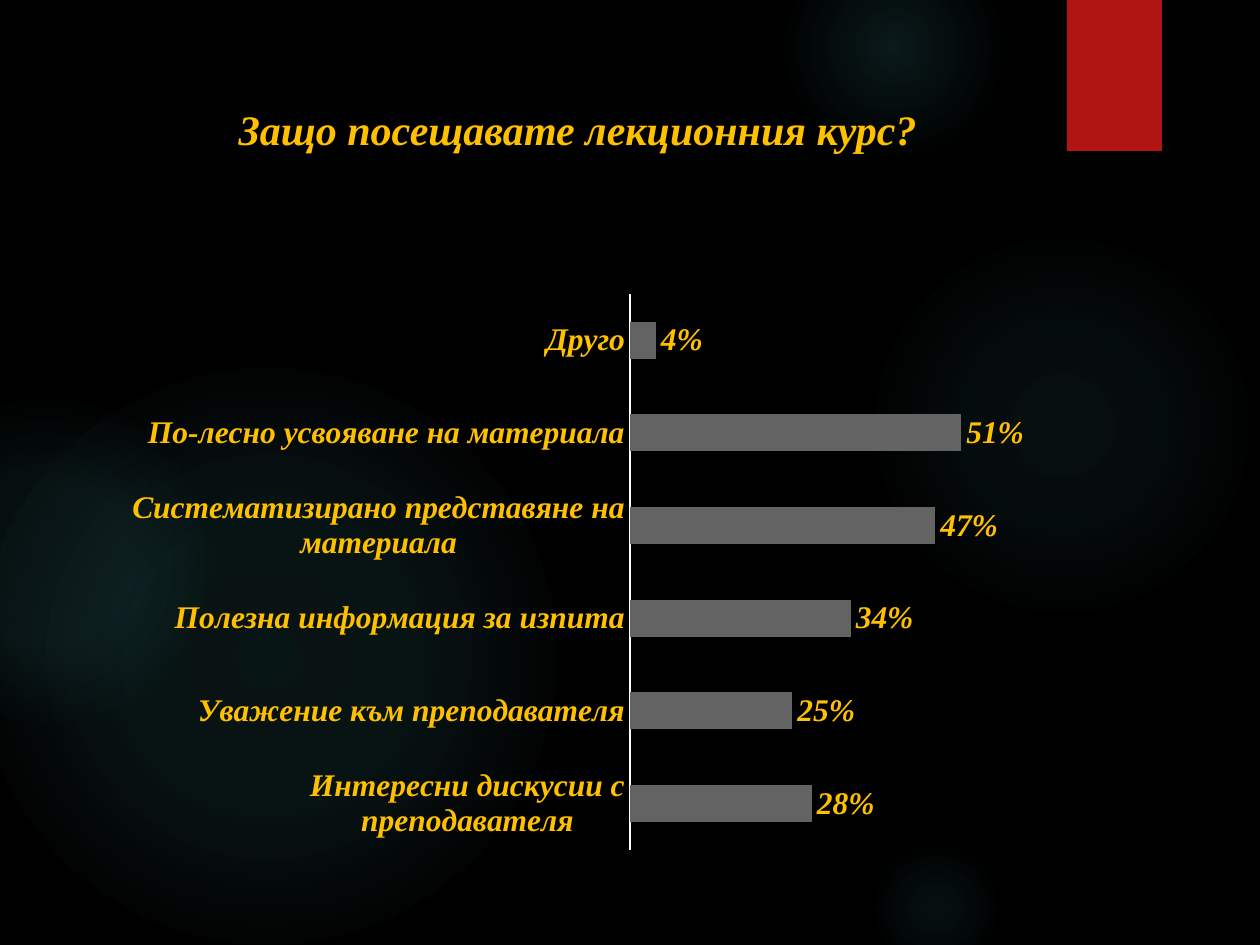
import pptx
import pptx.chart.data
import pptx.dml.color
import pptx.enum.chart
import pptx.enum.shapes
import pptx.enum.text
import pptx.oxml
import pptx.oxml.ns
import pptx.util

PX = 914400 / 126  # EMU per px
BLACK, WHITE, GOLD, RED, GREY, TEAL = "000000", "FFFFFF", "FFC000", "B01513", "636363", "50B9C1"
SERIF, SANS = "Times New Roman", "TeX Gyre Adventor"


def px(*lengths):
    return [pptx.util.Emu(round(n * PX)) for n in lengths]


def rgb(value):
    return pptx.dml.color.RGBColor.from_string(value)


def set_font(font, size=18, color=GOLD, name=SERIF, bold=True, italic=True):
    font.size, font.name, font.bold, font.italic = pptx.util.Pt(size), name, bold, italic
    font.color.rgb = rgb(color)


def write(p, text, **style):
    r = p.add_run()
    r.text = text
    set_font(r.font, **style)


class Deck:
    def __init__(self, width, height, background):
        self.prs = pptx.Presentation()
        self.prs.slide_width, self.prs.slide_height = px(width, height)
        self.s = self.prs.slides.add_slide(self.prs.slide_layouts[6])
        fill = self.s.background.fill
        fill.solid()
        fill.fore_color.rgb = rgb(background)

    def shape(self, kind, box, color):
        sp = self.s.shapes.add_shape(kind, *px(*box))
        sp.shadow.inherit = False
        sp.fill.solid()
        sp.fill.fore_color.rgb = rgb(color)
        sp.line.fill.background()
        return sp

    def glow(self, left, top, size, stops, color=TEAL):
        """Circle that fades outwards; stops are (position %, opacity %)."""
        sp = self.shape(pptx.enum.shapes.MSO_SHAPE.OVAL, (left, top, size, size), color)
        gs = "".join(
            f'<a:gs pos="{pos * 1000}"><a:srgbClr val="{color}">'
            f'<a:alpha val="{alpha * 1000}"/></a:srgbClr></a:gs>'
            for pos, alpha in stops)
        grad = pptx.oxml.parse_xml(
            f'<a:gradFill {pptx.oxml.ns.nsdecls("a")}><a:gsLst>{gs}</a:gsLst><a:path path="circle">'
            '<a:fillToRect l="50000" t="50000" r="50000" b="50000"/></a:path></a:gradFill>')
        spPr = sp._element.spPr
        spPr.replace(spPr.find(pptx.oxml.ns.qn("a:solidFill")), grad)

    def text(self, box, text, **style):
        tf = self.s.shapes.add_textbox(*px(*box)).text_frame
        tf.word_wrap = True
        tf.vertical_anchor = pptx.enum.text.MSO_ANCHOR.MIDDLE
        p = tf.paragraphs[0]
        p.alignment = pptx.enum.text.PP_ALIGN.CENTER
        write(p, text, **style)

    def bar_chart(self, box, plot, name, values, color):
        """Horizontal bars; plot is the inner plot area in slide px."""
        data = pptx.chart.data.CategoryChartData(number_format="0%")
        data.categories = list(values)
        data.add_series(name, list(values.values()))
        kind = pptx.enum.chart.XL_CHART_TYPE.BAR_CLUSTERED
        chart = self.s.shapes.add_chart(kind, *px(*box), data).chart
        chart.has_legend = chart.has_title = False
        set_font(chart.font, color=WHITE, name=SANS, bold=False, italic=False)

        # Axes
        axis = chart.category_axis
        axis.major_tick_mark = pptx.enum.chart.XL_TICK_MARK.NONE
        axis.format.line.color.rgb = rgb(WHITE)
        axis.format.line.width = pptx.util.Pt(1)
        set_font(axis.tick_labels.font)
        scale = chart.value_axis
        scale.minimum_scale, scale.maximum_scale = 0, 0.6
        scale.has_major_gridlines = False
        scale.visible = False

        # Bars and their labels
        bars = chart.plots[0]
        bars.gap_width, bars.vary_by_categories = 150, False
        series = bars.series[0]
        series.format.fill.solid()
        series.format.fill.fore_color.rgb = rgb(color)
        labels = series.data_labels
        labels.show_value = True
        labels.number_format, labels.number_format_is_linked = "0%", False
        labels.position = pptx.enum.chart.XL_LABEL_POSITION.OUTSIDE_END
        set_font(labels.font)

        # Inner plot area
        left, top, width, height = box
        parts = {"x": (plot[0] - left) / width, "y": (plot[1] - top) / height,
                 "w": plot[2] / width, "h": plot[3] / height}
        modes = '<c:xMode val="edge"/><c:yMode val="edge"/>'
        sizes = "".join(f'<c:{k} val="{v:.4f}"/>' for k, v in parts.items())
        area = chart._chartSpace.chart.plotArea
        for old in area.findall(pptx.oxml.ns.qn("c:layout")):
            area.remove(old)
        area.insert(0, pptx.oxml.parse_xml(
            f'<c:layout {pptx.oxml.ns.nsdecls("c")}><c:manualLayout>'
            f'<c:layoutTarget val="inner"/>{modes}{sizes}</c:manualLayout></c:layout>'))


def main():
    deck = Deck(1260, 945, BLACK)

    # Background glows
    deck.glow(868, 231, 388, [(0, 7), (36, 6), (69, 0)])
    deck.glow(784, -63, 220, [(0, 14), (36, 7), (73, 0)])
    deck.glow(868, 840, 136, [(0, 9), (36, 5), (66, 0)])
    deck.glow(-21, 368, 577, [(0, 11), (36, 10), (75, 0)])
    deck.glow(-116, 399, 325, [(0, 8), (36, 8), (72, 0)])

    # Ribbon and title
    deck.shape(pptx.enum.shapes.MSO_SHAPE.RECTANGLE, (1067, 0, 95, 151), RED)
    deck.text((63, 96, 1029, 66 + 34 - 34), "Защо посещавате лекционния курс?", size=24)

    # Survey answers, from the bottom bar up
    answers = {
        "Интересни дискусии с преподавателя": 0.28,
        "Уважение към преподавателя": 0.25,
        "Полезна информация за изпита": 0.34,
        "Систематизирано представяне на материала": 0.47,
        "По-лесно усвояване на материала": 0.51,
        "Друго": 0.04,
    }
    deck.bar_chart((113, 282, 925, 578), (630, 294, 390, 556), "Series 1", answers, GREY)

    deck.prs.save("out.pptx")


if __name__ == "__main__":
    main()
